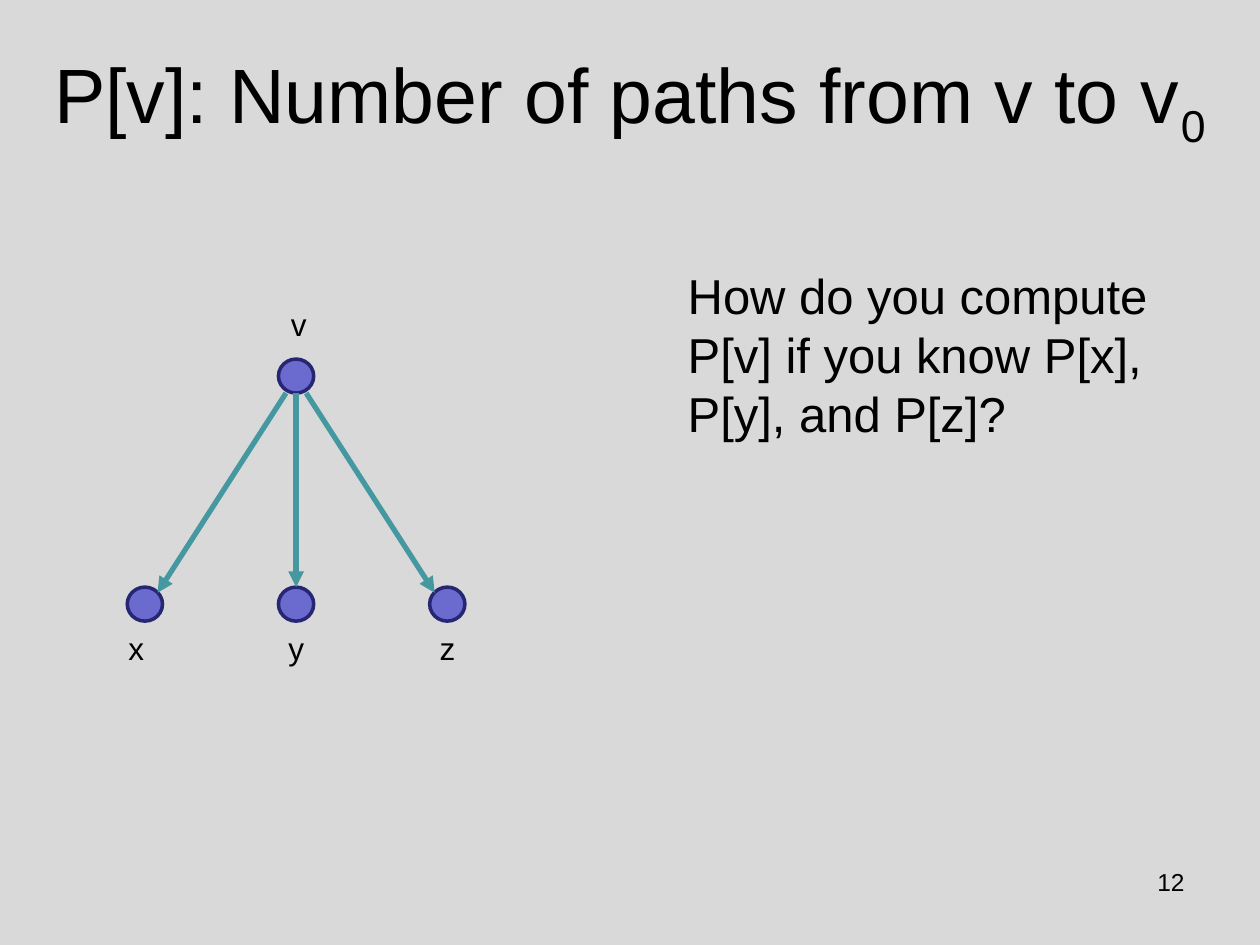
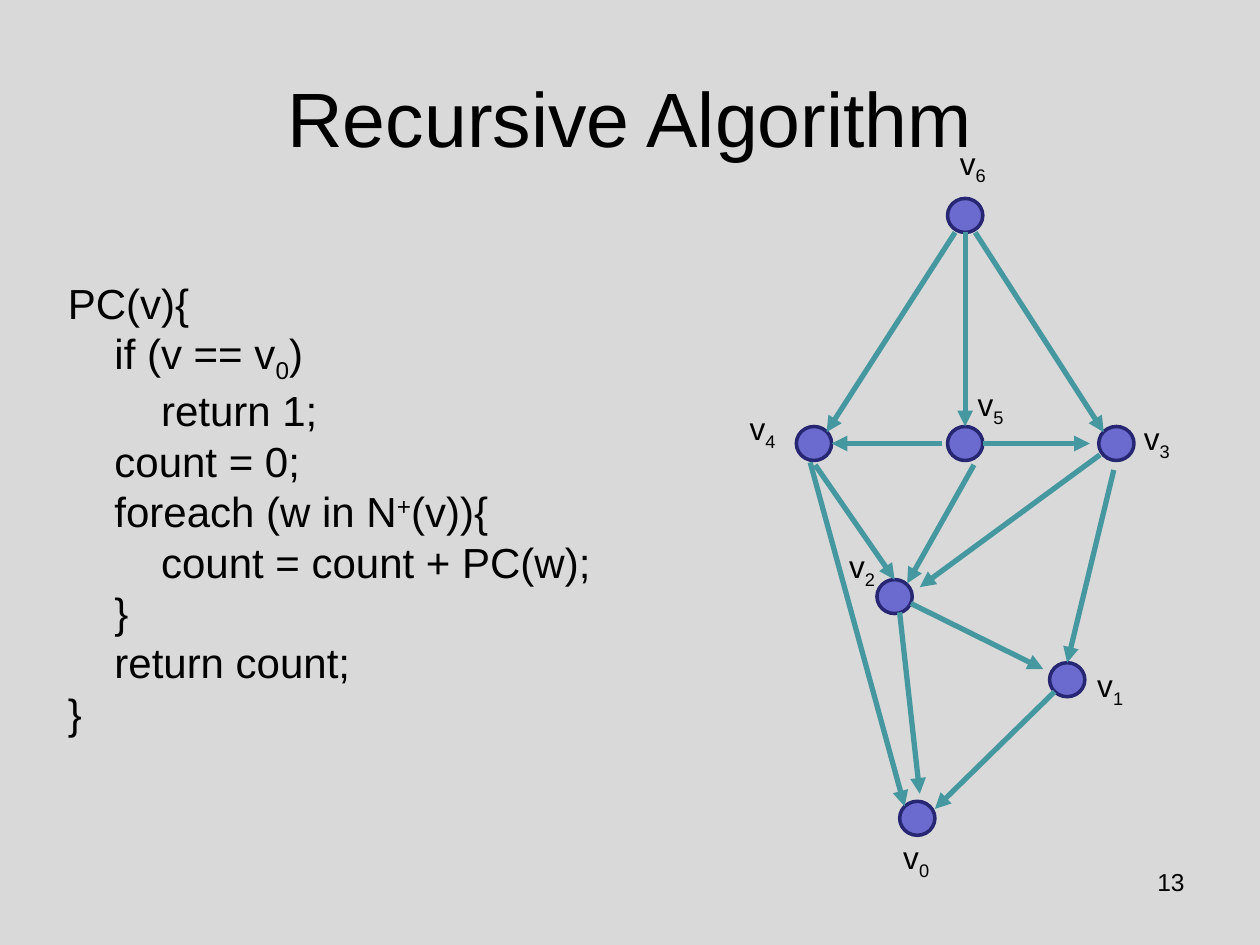
"""Two slides on counting paths in a directed graph."""
from dataclasses import dataclass

from lxml import etree
from pptx import Presentation
from pptx import util as u
from pptx.dml.color import RGBColor
from pptx.enum import shapes, text
from pptx.oxml.ns import qn


@dataclass(frozen=True)
class Theme:
    """Colours, type sizes and stroke widths in points."""
    font: str = "Arial"
    ink: str = "000000"
    background: str = "D9D9D9"
    node_fill: str = "6B6BCF"
    node_line: str = "262673"
    edge: str = "4597A0"
    title: int = 44
    question: int = 28
    code: int = 24
    label: int = 18
    number: int = 14
    node_stroke: int = 2
    edge_stroke: int = 3


THEME = Theme()
WIDTH, HEIGHT = u.Inches(10), u.Inches(7.5)
COLUMNS, ROWS = 100, 75
NODE_WIDTH, NODE_HEIGHT = 2.8, 2.7
LABEL_HEIGHT = 4
CHILD_GAP, CHILD_DROP = 12, 18.1
CODE_INDENT = 3.7
SUBSCRIPT, SUPERSCRIPT = -25, 30

CODE = [
    (0, [("PC(v){", 0)]),
    (1, [("if (v == v", 0), ("0", SUBSCRIPT), (")", 0)]),
    (2, [("return 1;", 0)]),
    (1, [("count = 0;", 0)]),
    (1, [("foreach (w in N", 0), ("+", SUPERSCRIPT), ("(v)){", 0)]),
    (2, [("count = count + PC(w);", 0)]),
    (1, [("}", 0)]),
    (1, [("return count;", 0)]),
    (0, [("}", 0)]),
]
CHILD_LABELS = [("x", 9.2), ("y", 21.9), ("z", 33.9)]
LOWER_NODES = [(71, 47.35), (84.7, 53.95), (72.8, 64.95)]
VERTEX_LABELS = [
    ("6", 75.2, 10.9), ("5", 76.6, 30.1), ("4", 58.5, 32), ("3", 89.8, 32.8),
    ("2", 66.4, 42.9), ("1", 86.1, 52.4), ("0", 70.7, 66),
]
LOWER_EDGES = [
    ((64.7, 36.9), (71, 46)),
    ((64.3, 36.7), (71.8, 64)),
    ((77.3, 36.9), (72, 46.3)),
    ((87.3, 36.1), (73, 46.6)),
    ((88.4, 37.3), (84.7, 52.6)),
    ((83.7, 54.9), (74.2, 64.2)),
    ((71.4, 48.6), (73, 63)),
    ((72.3, 47.9), (82.8, 53.1)),
    ((78, 35.2), (86.5, 35.2)),
    ((74.8, 35.2), (66, 35.2)),
]


def across(columns):
    """Turn grid columns into a length."""
    return round(WIDTH * columns / COLUMNS)


def down(rows):
    """Turn grid rows into a length."""
    return round(HEIGHT * rows / ROWS)


def grid_box(left, top, width, height):
    """Turn a box on the grid into lengths."""
    return across(left), down(top), across(width), down(height)


def add_text(slide, place, paragraphs, size, align=text.PP_ALIGN.LEFT,
             anchor=text.MSO_ANCHOR.TOP, wrap=True):
    """Add a text box from (indent level, runs) paragraphs."""
    frame = slide.shapes.add_textbox(*grid_box(*place)).text_frame
    frame.word_wrap = wrap
    frame.vertical_anchor = anchor
    for position, (level, runs) in enumerate(paragraphs):
        paragraph = frame.add_paragraph() if position else frame.paragraphs[0]
        paragraph.alignment = align
        if level:
            properties = paragraph._p.get_or_add_pPr()
            properties.set("marL", str(across(level * CODE_INDENT)))
            properties.set("indent", "0")
        for words, baseline in runs:
            run = paragraph.add_run()
            run.text = words
            run.font.name = THEME.font
            run.font.size = u.Pt(size)
            run.font.color.rgb = RGBColor.from_string(THEME.ink)
            if baseline:
                run._r.get_or_add_rPr().set("baseline", str(baseline * 1000))


def add_label(slide, left, top, width, runs):
    """Add the name of a vertex."""
    add_text(slide, (left, top, width, LABEL_HEIGHT), [(0, runs)],
             THEME.label, wrap=False)


def add_node(slide, x, y):
    """Add a vertex centred on a grid point."""
    place = grid_box(x - NODE_WIDTH / 2, y - NODE_HEIGHT / 2, NODE_WIDTH, NODE_HEIGHT)
    node = slide.shapes.add_shape(shapes.MSO_SHAPE.OVAL, *place)
    node.shadow.inherit = False
    node.fill.solid()
    node.fill.fore_color.rgb = RGBColor.from_string(THEME.node_fill)
    node.line.color.rgb = RGBColor.from_string(THEME.node_line)
    node.line.width = u.Pt(THEME.node_stroke)


def add_edge(slide, start, end):
    """Add an arrow between two grid points."""
    edge = slide.shapes.add_connector(
        shapes.MSO_CONNECTOR.STRAIGHT,
        across(start[0]), down(start[1]), across(end[0]), down(end[1]))
    edge.line.color.rgb = RGBColor.from_string(THEME.edge)
    edge.line.width = u.Pt(THEME.edge_stroke)
    etree.SubElement(edge.line._get_or_add_ln(), qn("a:tailEnd"), type="triangle")
    etree.SubElement(edge._element.spPr, qn("a:effectLst"))


def add_fan(slide, x, y):
    """Add a vertex with arrows to three children in a row below."""
    add_node(slide, x, y)
    for side in (-1, 0, 1):
        add_node(slide, x + side * CHILD_GAP, y + CHILD_DROP)
        rise = 0.9 if side else NODE_HEIGHT / 2
        add_edge(slide, (x + side * 0.8, y + NODE_HEIGHT / 2),
                 (x + side * 11, y + CHILD_DROP - rise))


def add_base_slide(presentation, number, title_runs, title_place):
    """Add a slide with its title and number."""
    slide = presentation.slides.add_slide(presentation.slide_layouts[6])
    add_text(slide, title_place, [(0, title_runs)], THEME.title,
             text.PP_ALIGN.CENTER, text.MSO_ANCHOR.MIDDLE)
    add_text(slide, (71.7, 68.3, 23.3, 5.2), [(0, [(str(number), 0)])],
             THEME.number, text.PP_ALIGN.RIGHT)
    return slide


def add_question_slide(presentation):
    """Ask how the count at v follows from its children."""
    slide = add_base_slide(
        presentation, 12,
        [("P[v]: Number of paths from v to v", 0), ("0", SUBSCRIPT)],
        (3, 1.6, 94, 12.5))
    add_fan(slide, 23.5, 29.85)
    add_label(slide, 22.1, 23.7, 3.3, [("v", 0)])
    for name, left in CHILD_LABELS:
        add_label(slide, left, 49.4, 3.3, [(name, 0)])
    question = "How do you compute P[v] if you know P[x], P[y], and P[z]?"
    add_text(slide, (53.6, 20.6, 43.4, 15.1), [(0, [(question, 0)])], THEME.question)


def add_algorithm_slide(presentation):
    """Show the recursive code beside a sample graph."""
    slide = add_base_slide(presentation, 13, [("Recursive Algorithm", 0)],
                           (5, 3, 90, 12.5))
    add_text(slide, (4.4, 21.5, 55.7, 37.4), CODE, THEME.code)
    add_fan(slide, 76.6, 17.1)
    for x, y in LOWER_NODES:
        add_node(slide, x, y)
    for index, left, top in VERTEX_LABELS:
        add_label(slide, left, top, 4.2, [("v", 0), (index, SUBSCRIPT)])
    for start, end in LOWER_EDGES:
        add_edge(slide, start, end)


def main():
    """Build and save the presentation."""
    presentation = Presentation()
    presentation.slide_width, presentation.slide_height = WIDTH, HEIGHT
    background = presentation.slide_master.background.fill
    background.solid()
    background.fore_color.rgb = RGBColor.from_string(THEME.background)
    add_question_slide(presentation)
    add_algorithm_slide(presentation)
    presentation.save("out.pptx")


if __name__ == "__main__":
    main()
